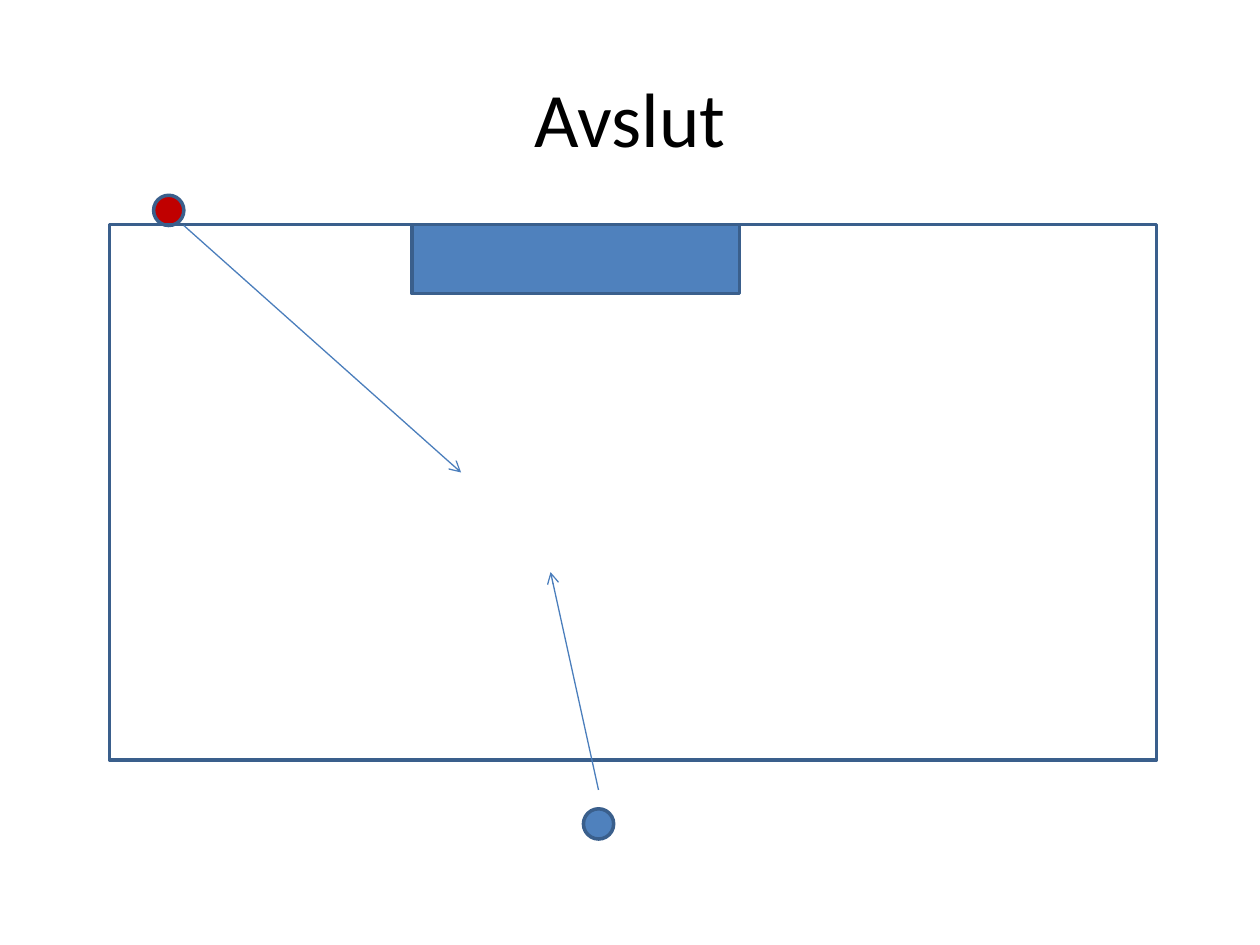
from pptx import Presentation
from pptx.dml.color import RGBColor
from pptx.enum.shapes import MSO_CONNECTOR as Conn, MSO_SHAPE as Form
from pptx.enum.text import MSO_ANCHOR as Anchor, PP_ALIGN as Align
from pptx.oxml.ns import qn
from pptx.util import Pt
from lxml.etree import SubElement

TITLE = "Avslut"
BLUE, RED, EDGE, PATH = "4F81BD", "C00000", "3A5F8C", "4B7EBC"
BALL = 17.3
# form, left, top, width, height, fill
SHAPES = [
    (Form.OVAL, 333.4, 462.2, BALL, BALL, BLUE),
    (Form.OVAL, 87.8, 111.6, BALL, BALL, RED),
    (Form.RECTANGLE, 235.4, 128.2, 187.2, 39.6, BLUE),
    (Form.RECTANGLE, 62.6, 128.2, 598.3, 306, None),
]
# start x, start y, end x, end y
RUNS = [(342, 451.4, 314.6, 326.9), (105.1, 128.9, 263.5, 270)]


def color(code):
    return RGBColor.from_string(code)


def add_title(slide, text):
    box = slide.shapes.add_textbox(Pt(36), Pt(21.6), Pt(648), Pt(90))
    frame = box.text_frame
    frame.word_wrap = True
    frame.vertical_anchor = Anchor.MIDDLE
    frame.text = text
    para = frame.paragraphs[0]
    para.alignment = Align.CENTER
    font = para.runs[0].font
    font.name, font.size = "Calibri", Pt(44)
    font.color.rgb = color("000000")


def add_shape(slide, form, *place, fill):
    shape = slide.shapes.add_shape(form, *map(Pt, place))
    shape.shadow.inherit = False
    if fill:
        shape.fill.solid()
        shape.fill.fore_color.rgb = color(fill)
    else:
        shape.fill.background()
    shape.line.color.rgb = color(EDGE)
    shape.line.width = Pt(2)


def add_arrow(slide, *ends):
    arrow = slide.shapes.add_connector(Conn.STRAIGHT, *map(Pt, ends))
    arrow.line.color.rgb = color(PATH)
    arrow.line.width = Pt(0.75)
    SubElement(arrow.line._get_or_add_ln(), qn("a:tailEnd"), type="arrow")
    SubElement(arrow._element.spPr, qn("a:effectLst"))


def main():
    deck = Presentation()
    deck.slide_width, deck.slide_height = Pt(720), Pt(540)
    slide = deck.slides.add_slide(deck.slide_layouts[6])
    add_title(slide, TITLE)
    for *place, fill in SHAPES:
        add_shape(slide, *place, fill=fill)
    for ends in RUNS:
        add_arrow(slide, *ends)
    deck.save("out.pptx")


if __name__ == "__main__":
    main()
